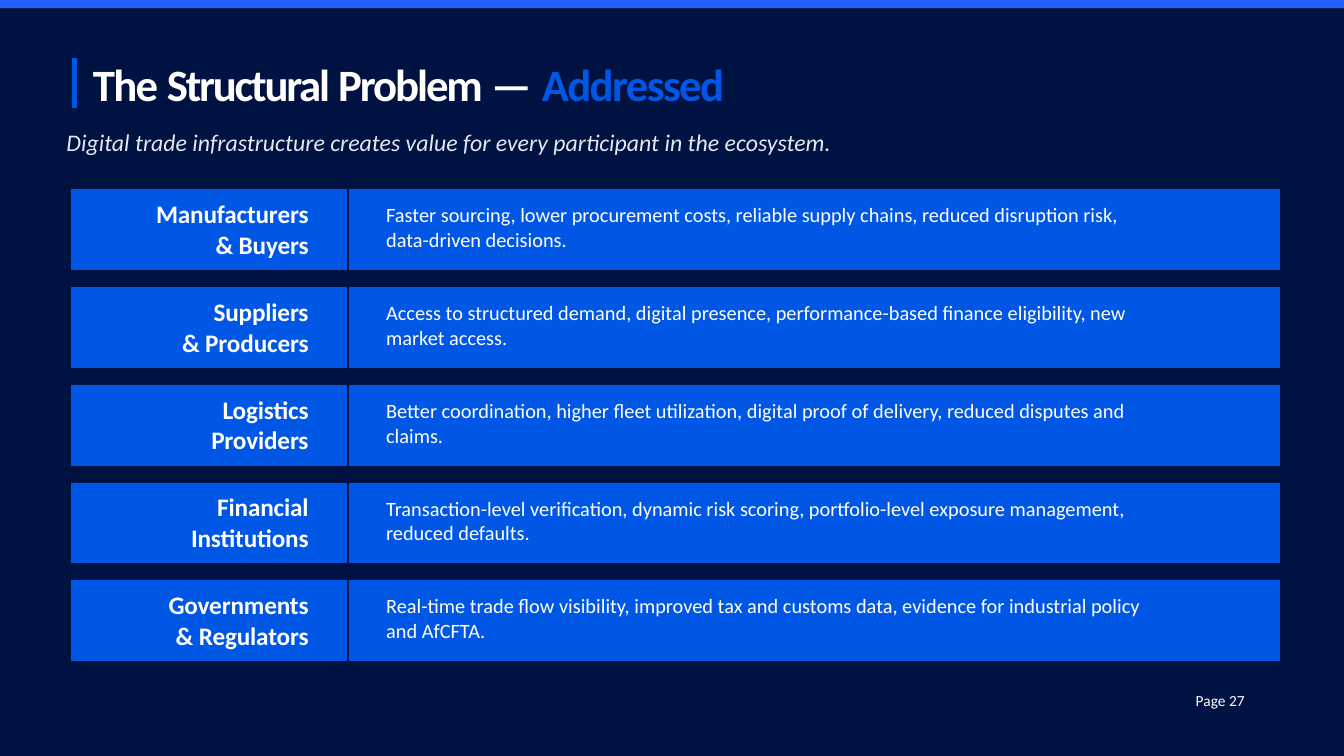
import pptx
import pptx.dml.color
import pptx.enum.shapes
import pptx.enum.text
import pptx.oxml.ns
import pptx.util
from lxml import etree

EMU_PER_PX = 9144  # 100 px to the inch
FONT = "Calibri"
NAVY, BLUE, BAR_BLUE = "001242", "0057E6", "255FFF"
WHITE, PALE = "FFFFFF", "E1E8EF"
NO_STYLE = "{2D5ABB26-0587-4C30-8999-92F81FD0307C}"
LEFT, RIGHT = pptx.enum.text.PP_ALIGN.LEFT, pptx.enum.text.PP_ALIGN.RIGHT
TOP = pptx.enum.text.MSO_ANCHOR.TOP

PARTICIPANTS = [
    (["Manufacturers", "& Buyers"],
     "Faster sourcing, lower procurement costs, reliable supply chains, "
     "reduced disruption risk, data-driven decisions."),
    (["Suppliers", "& Producers"],
     "Access to structured demand, digital presence, performance-based "
     "finance eligibility, new market access."),
    (["Logistics", "Providers"],
     "Better coordination, higher fleet utilization, digital proof of "
     "delivery, reduced disputes and claims."),
    (["Financial", "Institutions"],
     "Transaction-level verification, dynamic risk scoring, portfolio-level "
     "exposure management, reduced defaults."),
    (["Governments", "& Regulators"],
     "Real-time trade flow visibility, improved tax and customs data, "
     "evidence for industrial policy and AfCFTA."),
]


def px(length):
    return pptx.util.Emu(length * EMU_PER_PX)


def color(hex_string):
    return pptx.dml.color.RGBColor.from_string(hex_string)


def sub(parent, tag, **attributes):
    return etree.SubElement(parent, pptx.oxml.ns.qn(tag), attributes)


def add_run(paragraph, text, size, ink=WHITE, bold=False, italic=False, spacing=0):
    run = paragraph.add_run()
    run.text = text
    run.font.name = FONT
    run.font.size = pptx.util.Pt(size)
    run.font.bold, run.font.italic = bold, italic
    run.font.color.rgb = color(ink)
    if spacing:
        run.font._element.set("spc", str(round(spacing * 100)))


def set_margins(holder, left=0, top=0, right=0):
    holder.margin_left, holder.margin_top = px(left), px(top)
    holder.margin_right, holder.margin_bottom = px(right), px(0)


def add_text(slide, left, top, width, height, text, size, **style):
    frame = slide.shapes.add_textbox(px(left), px(top), px(width), px(height)).text_frame
    frame.word_wrap = True
    set_margins(frame)
    add_run(frame.paragraphs[0], text, size, **style)


def add_top_bar(slide):
    bar = slide.shapes.add_shape(
        pptx.enum.shapes.MSO_SHAPE.RECTANGLE, px(0), px(0), px(1333), px(8))
    bar.shadow.inherit = False
    bar.fill.solid()
    bar.fill.fore_color.rgb = color(BAR_BLUE)
    bar.line.fill.background()


def add_accent(slide, x, top, bottom):
    accent = slide.shapes.add_connector(
        pptx.enum.shapes.MSO_CONNECTOR.STRAIGHT, px(x), px(top), px(x), px(bottom))
    accent.line.color.rgb = color(BLUE)
    accent.line.width = pptx.util.Pt(3)
    sub(accent._element.spPr, "a:effectLst")


def set_title(slide):
    title = slide.shapes.title
    title.left, title.top, title.width, title.height = px(83), px(49), px(1166), px(65)
    frame = title.text_frame
    frame.auto_size = pptx.enum.text.MSO_AUTO_SIZE.NONE
    frame.vertical_anchor = TOP
    set_margins(frame, left=9, top=7)
    heading = frame.paragraphs[0]
    heading.alignment = LEFT
    for text, ink, spacing in [("The ", WHITE, -1.2), ("Structural ", WHITE, -1.6),
                               ("Problem ", WHITE, -1.5), ("— ", WHITE, 0),
                               ("Addressed", BLUE, -1.2)]:
        add_run(heading, text, 32, ink, bold=True, spacing=spacing)


def fill_cell(cell, fill, divider_tag):
    """Colour a cell and draw its side of the column divider."""
    cell.fill.solid()
    cell.fill.fore_color.rgb = color(fill)
    cell.vertical_anchor = TOP
    properties = cell._tc.get_or_add_tcPr()
    divider = sub(properties, divider_tag, w=str(pptx.util.Pt(1.5)))
    sub(sub(divider, "a:solidFill"), "a:srgbClr", val=NAVY)
    properties.insert(0, divider)


def fill_gap(cell, divider_tag):
    fill_cell(cell, NAVY, divider_tag)
    set_margins(cell)
    # A tiny end mark keeps the empty row thin
    sub(cell.text_frame.paragraphs[0]._p, "a:endParaRPr", sz="200")


def add_participants(slide):
    table = slide.shapes.add_table(
        2 * len(PARTICIPANTS), 2, px(70), px(177), px(1200), px(479)).table
    table.first_row = table.horz_banding = False
    table._tbl.tblPr.find(pptx.oxml.ns.qn("a:tableStyleId")).text = NO_STYLE
    table.columns[0].width, table.columns[1].width = px(275), px(925)

    for index, (name_lines, benefit) in enumerate(PARTICIPANTS):
        gap, band = 2 * index, 2 * index + 1
        table.rows[gap].height = px(17 if index else 11)
        table.rows[band].height = px(80)
        fill_gap(table.cell(gap, 0), "a:lnR")
        fill_gap(table.cell(gap, 1), "a:lnL")

        name = table.cell(band, 0)
        fill_cell(name, BLUE, "a:lnR")
        set_margins(name, top=10, right=39)
        for number, line in enumerate(name_lines):
            frame = name.text_frame
            paragraph = frame.add_paragraph() if number else frame.paragraphs[0]
            paragraph.alignment = RIGHT
            add_run(paragraph, line, 18, bold=True, spacing=-0.1)

        value = table.cell(band, 1)
        fill_cell(value, BLUE, "a:lnL")
        set_margins(value, left=38, top=14, right=135)
        add_run(value.text_frame.paragraphs[0], benefit, 14.5)


def main():
    deck = pptx.Presentation()
    deck.slide_width, deck.slide_height = px(1333), px(750)
    slide = deck.slides.add_slide(deck.slide_layouts[5])
    slide.background.fill.solid()
    slide.background.fill.fore_color.rgb = color(NAVY)

    # Header
    add_top_bar(slide)
    set_title(slide)
    add_accent(slide, 74, 58, 107)
    add_text(slide, 66, 127, 773, 30,
             "Digital trade infrastructure creates value for every participant "
             "in the ecosystem.", 17, ink=PALE, italic=True)

    # Participants and what they gain
    add_participants(slide)

    # Footer
    add_text(slide, 1186, 686, 60, 18, "Page 27", 11)

    deck.save("out.pptx")


if __name__ == "__main__":
    main()
